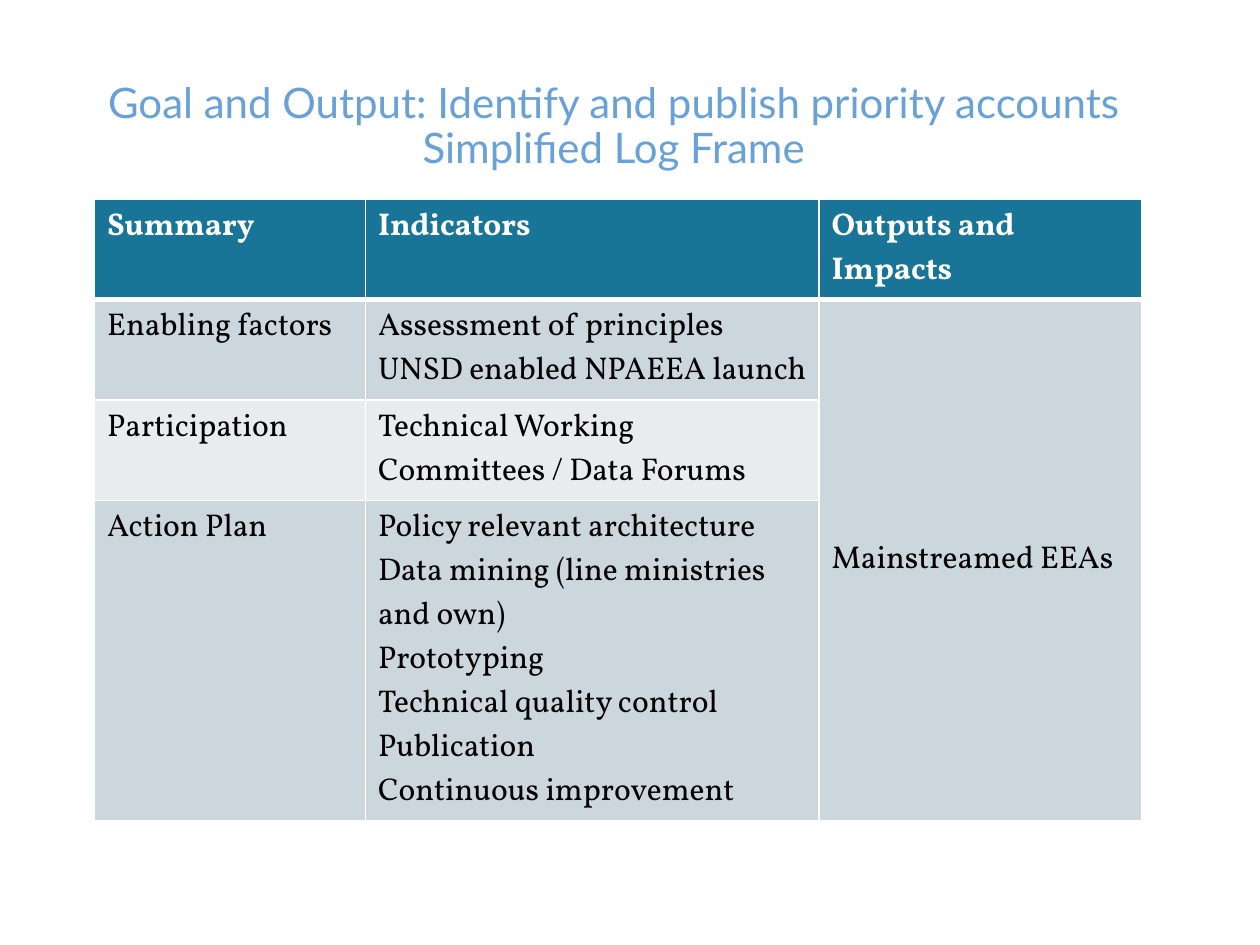
from dataclasses import dataclass

from lxml.etree import SubElement
from pptx import Presentation
from pptx.dml.color import RGBColor
from pptx.enum.text import MSO_ANCHOR, MSO_AUTO_SIZE, PP_ALIGN
from pptx.oxml.ns import qn
from pptx.util import Inches, Pt


@dataclass(frozen=True)
class Theme:
    title: str = "68A1D7"
    head: str = "197598"
    odd: str = "CCD6DD"
    even: str = "E8ECEF"
    ink: str = "000000"
    white: str = "FFFFFF"
    title_font: str = "Lato"
    font: str = "Vollkorn"
    title_size: int = 24
    size: int = 18


THEME = Theme()

TITLE = "Goal and Output: Identify and publish priority accounts\nSimplified Log Frame"
COLS = [2.15, 3.6, 2.56]
ROW = 0.41
ROWS = [
    [["Summary"], ["Indicators"], ["Outputs and Impacts"]],
    [
        ["Enabling factors"],
        ["Assessment of principles", "UNSD enabled NPAEEA launch"],
        ["Mainstreamed EEAs"],
    ],
    [["Participation"], ["Technical Working Committees / Data Forums"], []],
    [
        ["Action Plan"],
        [
            "Policy relevant architecture",
            "Data mining (line ministries and own)",
            "Prototyping",
            "Technical quality control",
            "Publication",
            "Continuous improvement",
        ],
        [],
    ],
]


def set_font(para, name, size, color, bold=False):
    font = para.font
    font.name, font.size, font.bold = name, Pt(size), bold
    font.color.rgb = RGBColor.from_string(color)


def add_title(slide, box):
    title = slide.shapes.title
    title.left, title.top, title.width, title.height = map(Inches, box)
    frame = title.text_frame
    frame.word_wrap = True
    frame.auto_size = MSO_AUTO_SIZE.NONE
    frame.vertical_anchor = MSO_ANCHOR.BOTTOM
    para = frame.paragraphs[0]
    para.text = TITLE.replace("\n", "\v")
    para.alignment = PP_ALIGN.CENTER
    para.line_spacing = 0.9
    set_font(para, THEME.title_font, THEME.title_size, THEME.title)


def set_edges(cell, foot):
    props = cell._tc.get_or_add_tcPr()
    for side, width in zip("LRTB", (1, 1, 1, foot)):
        line = SubElement(props, qn(f"a:ln{side}"), w=str(Pt(width)))
        fill = SubElement(line, qn("a:solidFill"))
        SubElement(fill, qn("a:srgbClr"), val=THEME.white)


def fill_cell(cell, lines, head, color):
    set_edges(cell, 3 if head else 1)
    cell.fill.solid()
    cell.fill.fore_color.rgb = RGBColor.from_string(color)
    frame = cell.text_frame
    for i, line in enumerate(lines):
        para = frame.add_paragraph() if i else frame.paragraphs[0]
        para.text = line
        ink = THEME.white if head else THEME.ink
        set_font(para, THEME.font, THEME.size, ink, head)


def add_log(slide, box):
    shape = slide.shapes.add_table(len(ROWS), len(COLS), *map(Inches, box))
    table = shape.table
    for col, width in zip(table.columns, COLS):
        col.width = Inches(width)
    for r, row in enumerate(ROWS):
        table.rows[r].height = Inches(ROW)
        band = THEME.odd if r % 2 else THEME.even
        for c, lines in enumerate(row):
            color = band if lines else THEME.odd
            fill_cell(table.cell(r, c), lines, r == 0, color if r else THEME.head)
    impact = table.cell(1, 2)
    impact.merge(table.cell(3, 2))
    impact.vertical_anchor = MSO_ANCHOR.MIDDLE
    shape.height = Inches(box[3])


def main():
    deck = Presentation()
    deck.slide_width, deck.slide_height = Inches(10), Inches(7.5)
    slide = deck.slides.add_slide(deck.slide_layouts[0])
    sub = slide.placeholders[1].element
    sub.getparent().remove(sub)
    add_title(slide, (0.67, 0.52, 8.4, 0.9))
    add_log(slide, (0.75, 1.58, sum(COLS), 4.6))
    deck.save("out.pptx")


if __name__ == "__main__":
    main()
